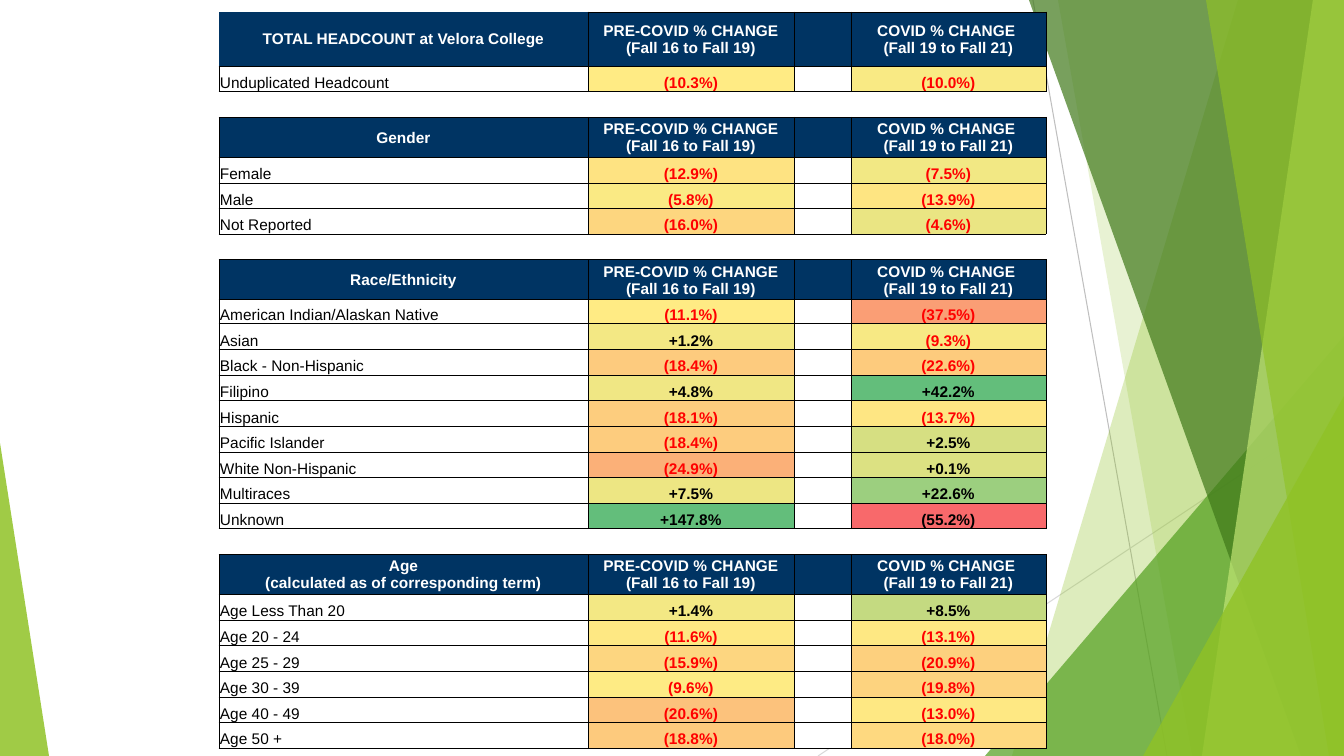
from dataclasses import dataclass

from lxml.etree import SubElement
from pptx import Presentation
from pptx.dml.color import RGBColor
from pptx.enum.shapes import MSO_CONNECTOR, MSO_SHAPE
from pptx.enum.text import MSO_ANCHOR, PP_ALIGN
from pptx.oxml.ns import qn
from pptx.util import Pt

PX = 914400 / 100.8
SLIDE_WIDTH, SLIDE_HEIGHT = 1344, 756
TABLE_LEFT, TABLE_TOP, TABLE_HEIGHT = 219, 12, 737
COLUMN_WIDTHS = (369, 206, 57, 195)
TOP_HEADER_HEIGHT, HEADER_HEIGHT, TIGHT_HEIGHT = 54, 40, 24
TIGHT_LABEL = "American Indian/Alaskan Native"


@dataclass(frozen=True)
class Theme:
    """Colours, font and sizes of the slide."""
    font: str = "Arial"
    text_size: float = 11
    border_width: float = 0.5
    hairline_width: float = 0.75
    header: str = "003463"
    paper: str = "FFFFFF"
    ink: str = "000000"
    decline: str = "FF0000"
    deepest_heat: str = "F8696B"
    leaf: str = "90C226"
    grass: str = "54A021"
    forest: str = "3F7819"
    lime: str = "C0E474"
    grey: str = "BFBFBF"
    pale_grey: str = "D9D9D9"


THEME = Theme()
PRE_COVID = ("PRE-COVID % CHANGE (Fall 16 to Fall 19)",)
COVID = ("COVID % CHANGE ", "(Fall 19 to Fall 21)")

SECTIONS = [
    (("TOTAL HEADCOUNT at Velora College",), [
        ("Unduplicated Headcount", "(10.3%)", "FFEB84", "(10.0%)", "F9EA84"),
    ]),
    (("Gender",), [
        ("Female", "(12.9%)", "FEE382", "(7.5%)", "F2E884"),
        ("Male", "(5.8%)", "FAEA84", "(13.9%)", "FEE582"),
        ("Not Reported", "(16.0%)", "FDD67F", "(4.6%)", "EAE583"),
    ]),
    (("Race/Ethnicity",), [
        (TIGHT_LABEL, "(11.1%)", "FFEB84", "(37.5%)", "FA9E75"),
        ("Asian", "+1.2%", "F3E884", "(9.3%)", "F7E984"),
        ("Black - Non-Hispanic", "(18.4%)", "FDCB7E", "(22.6%)", "FDCB7D"),
        ("Filipino", "+4.8%", "F0E784", "+42.2%", "63BE7B"),
        ("Hispanic", "(18.1%)", "FDCD7E", "(13.7%)", "FEE683"),
        ("Pacific Islander", "(18.4%)", "FDCC7E", "+2.5%", "D6DF82"),
        ("White Non-Hispanic", "(24.9%)", "FBB078", "+0.1%", "DCE182"),
        ("Multiraces", "+7.5%", "EDE683", "+22.6%", "9CCF7F"),
        ("Unknown", "+147.8%", "63BE7B", "(55.2%)", THEME.deepest_heat),
    ]),
    (("Age", "(calculated as of corresponding term)"), [
        ("Age Less Than 20", "+1.4%", "F3E884", "+8.5%", "C4DA81"),
        ("Age 20 - 24", "(11.6%)", "FEE883", "(13.1%)", "FEE883"),
        ("Age 25 - 29", "(15.9%)", "FDD680", "(20.9%)", "FDD07E"),
        ("Age 30 - 39", "(9.6%)", "FEEB84", "(19.8%)", "FDD37F"),
        ("Age 40 - 49", "(20.6%)", "FCC27C", "(13.0%)", "FEE883"),
        ("Age 50 +", "(18.8%)", "FDCA7D", "(18.0%)", "FED980"),
    ]),
]


def emu(px):
    """Turn px into EMU."""
    return round(px * PX)


def tint(shape, color, opacity):
    """Give a shape a see-through fill without line or shadow."""
    shape.shadow.inherit = False
    shape.line.fill.background()
    shape.fill.solid()
    shape.fill.fore_color.rgb = RGBColor.from_string(color)
    swatch = next(shape.element.spPr.iter(qn("a:srgbClr")))
    SubElement(swatch, qn("a:alpha"), val=str(opacity * 1000))


def add_hairline(slide, start, end, color):
    """Draw a thin straight line."""
    hairline = slide.shapes.add_connector(
        MSO_CONNECTOR.STRAIGHT, *(emu(px) for px in (*start, *end)))
    hairline.line.color.rgb = RGBColor.from_string(color)
    hairline.line.width = Pt(THEME.hairline_width)
    SubElement(hairline.element.spPr, qn("a:effectLst"))


def add_facet(slide, top_x, bottom_x, color, opacity):
    """Draw a full-height facet from a slanted edge to the right edge."""
    builder = slide.shapes.build_freeform(top_x, 0, scale=PX)
    builder.add_line_segments([(SLIDE_WIDTH, 0), (SLIDE_WIDTH, SLIDE_HEIGHT),
                               (bottom_x, SLIDE_HEIGHT)], close=True)
    tint(builder.convert_to_shape(), color, opacity)


def add_corner(slide, left, top, width, apex, color, opacity):
    """Draw a triangle that stands on the bottom edge."""
    corner = slide.shapes.add_shape(
        MSO_SHAPE.ISOSCELES_TRIANGLE, emu(left), emu(top), emu(width),
        emu(SLIDE_HEIGHT - top))
    corner.adjustments[0] = apex
    tint(corner, color, opacity)


def add_backdrop(slide):
    """Draw the green facets from back to front."""
    add_hairline(slide, (1033, 0), (1167, 756), THEME.grey)
    add_hairline(slide, (1344, 406), (818, 756), THEME.pale_grey)
    add_facet(slide, 1238, 1012, THEME.leaf, 30)
    add_facet(slide, 1058, 1192, THEME.leaf, 20)
    add_corner(slide, 985, 336, 359, 1, THEME.grass, 72)
    add_facet(slide, 1029, 1301, THEME.forest, 70)
    add_facet(slide, 1313, 1202, THEME.lime, 70)
    add_facet(slide, 1206, 1329, THEME.leaf, 65)
    add_corner(slide, 1143, 396, 201, 1, THEME.leaf, 80)
    add_corner(slide, 0, 443, 49, 0, THEME.leaf, 85)


def set_borders(cell, sides):
    """Draw the given sides of a cell and clear the others."""
    properties = cell._tc.get_or_add_tcPr()
    for position, side in enumerate("LRTB"):
        edge = SubElement(properties, qn(f"a:ln{side}"),
                          w=str(Pt(THEME.border_width)))
        if side in sides:
            paint = SubElement(edge, qn("a:solidFill"))
            SubElement(paint, qn("a:srgbClr"), val=THEME.ink)
        else:
            SubElement(edge, qn("a:noFill"))
        properties.insert(position, edge)


def fill_cell(cell, lines, color, background, bold=True, centered=True,
              anchor=MSO_ANCHOR.BOTTOM, sides="LRTB"):
    """Write and format one table cell."""
    cell.fill.solid()
    cell.fill.fore_color.rgb = RGBColor.from_string(background)
    cell.margin_left = cell.margin_right = cell.margin_top = emu(1)
    cell.margin_bottom = 0
    cell.vertical_anchor = anchor
    paragraph = cell.text_frame.paragraphs[0]
    paragraph.alignment = PP_ALIGN.CENTER if centered else PP_ALIGN.LEFT
    for index, line in enumerate(lines):
        if index:
            paragraph.add_line_break()
        run = paragraph.add_run()
        run.text = line
        run.font.name = THEME.font
        run.font.size = Pt(THEME.text_size)
        run.font.bold = bold
        run.font.color.rgb = RGBColor.from_string(color)
    SubElement(paragraph._p, qn("a:endParaRPr"),
               sz=str(round(THEME.text_size * 100)))
    set_borders(cell, sides)


def fill_header(row, heading, is_top):
    """Fill the dark row that opens a section."""
    for column, lines in enumerate((heading, PRE_COVID, (), COVID)):
        fill_cell(row.cells[column], lines, THEME.paper, THEME.header,
                  anchor=MSO_ANCHOR.MIDDLE,
                  sides="RB" if is_top and column == 0 else "LRTB")


def fill_group(row, label, pre, pre_fill, covid, covid_fill):
    """Fill one row of a student group, with red declines except on red."""
    fill_cell(row.cells[0], (label,), THEME.ink, THEME.paper,
              bold=False, centered=False)
    fill_cell(row.cells[2], (), THEME.ink, THEME.paper)
    for column, change, heat in ((1, pre, pre_fill), (3, covid, covid_fill)):
        is_red = change.startswith("(") and heat != THEME.deepest_heat
        fill_cell(row.cells[column], (change,),
                  THEME.decline if is_red else THEME.ink, heat)


def add_headcount_table(slide):
    """Build the table of all sections, parted by open rows."""
    row_count = sum(len(groups) + 2 for _, groups in SECTIONS) - 1
    headers = TOP_HEADER_HEIGHT + HEADER_HEIGHT * (len(SECTIONS) - 1)
    group_height = ((TABLE_HEIGHT - headers - TIGHT_HEIGHT)
                    / (row_count - len(SECTIONS) - 1))
    table = slide.shapes.add_table(
        row_count, len(COLUMN_WIDTHS), emu(TABLE_LEFT), emu(TABLE_TOP),
        emu(sum(COLUMN_WIDTHS)), emu(TABLE_HEIGHT)).table
    table.first_row = table.horz_banding = False
    for column, width in zip(table.columns, COLUMN_WIDTHS):
        column.width = emu(width)
    rows = iter(table.rows)
    for number, (heading, groups) in enumerate(SECTIONS):
        if number:
            gap = next(rows)
            gap.height = emu(group_height)
            for cell in gap.cells:
                fill_cell(cell, (), THEME.ink, THEME.paper, sides="TB")
        header = next(rows)
        header.height = emu(HEADER_HEIGHT if number else TOP_HEADER_HEIGHT)
        fill_header(header, heading, is_top=number == 0)
        for group in groups:
            row = next(rows)
            row.height = emu(TIGHT_HEIGHT if group[0] == TIGHT_LABEL
                             else group_height)
            fill_group(row, *group)


def main():
    """Build and save the slide."""
    deck = Presentation()
    deck.slide_width, deck.slide_height = emu(SLIDE_WIDTH), emu(SLIDE_HEIGHT)
    slide = deck.slides.add_slide(deck.slide_layouts[6])
    add_backdrop(slide)
    add_headcount_table(slide)
    deck.save("out.pptx")


if __name__ == "__main__":
    main()
